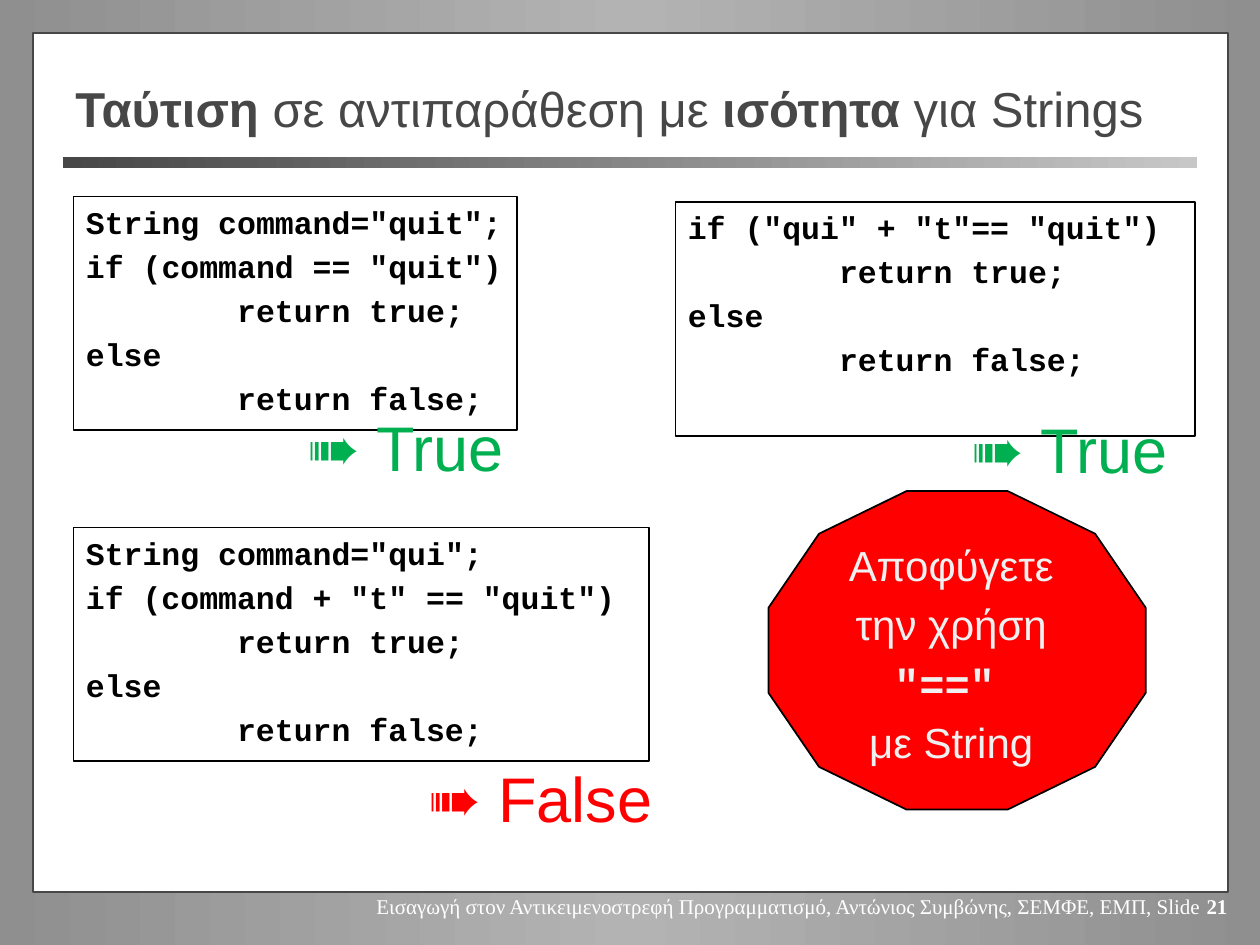
from copy import deepcopy
from lxml import etree
from pptx import Presentation
from pptx.dml.color import RGBColor
from pptx.enum import shapes, text
from pptx.oxml.ns import qn
from pptx.util import Pt

BLACK, GREY, WHITE, RED, GREEN = "000000", "474747", "FFFFFF", "FF0000", "00B050"


def rgb(value):
    return RGBColor.from_string(value)


def write(sp, lines, font, size, color, bold=False, align=text.PP_ALIGN.LEFT, before=20):
    """Fill a shape with lines; eight leading blanks become a left margin."""
    tf = sp.text_frame
    tf.word_wrap = True
    tf.vertical_anchor = text.MSO_ANCHOR.TOP
    for i, line in enumerate(lines):
        p = tf.paragraphs[0] if i == 0 else tf.add_paragraph()
        p.alignment = align
        pPr = p._p.get_or_add_pPr()
        if line.startswith("\t"):
            pPr.set("marL", str(Pt(86.4)))
            pPr.set("indent", "0")
        if before:
            spc = etree.SubElement(pPr, qn("a:spcBef"))
            etree.SubElement(spc, qn("a:spcPct")).set("val", str(before * 1000))
        # Every second part between asterisks is in the opposite weight
        for j, part in enumerate(line.strip("\t").split("*")):
            if part:
                r = p.add_run()
                r.text = part
                r.font.name, r.font.size = font, Pt(size)
                r.font.bold = bold != (j % 2 == 1)
                r.font.color.rgb = rgb(color)


prs = Presentation()
prs.slide_width, prs.slide_height = Pt(720), Pt(540)
s = prs.slides.add_slide(prs.slide_layouts[6])

# Background gradient with a lighter middle
bg = s.background.fill
bg.gradient()
bg.gradient_angle = 0
stops = bg.gradient_stops
for stop in stops:
    stop.color.rgb = rgb("8F8F8F")
first = s.background._cSld.find(".//" + qn("a:gs"))
first.addnext(deepcopy(first))
middle = bg.gradient_stops[1]
middle.position = 0.5
middle.color.rgb = rgb("B3B3B3")

# White panel
sp = s.shapes.add_shape(shapes.MSO_SHAPE.RECTANGLE, Pt(18.7), Pt(18.7), Pt(683), Pt(491))
sp.shadow.inherit = False
sp.fill.solid()
sp.fill.fore_color.rgb = rgb(WHITE)
sp.line.color.rgb = rgb(GREY)
sp.line.width = Pt(1)

# Gradient rule under the title
sp = s.shapes.add_shape(shapes.MSO_SHAPE.RECTANGLE, Pt(36), Pt(90), Pt(648), Pt(6))
sp.shadow.inherit = False
sp.line.fill.background()
sp.fill.gradient()
sp.fill.gradient_angle = 0
for stop, color in zip(sp.fill.gradient_stops, (GREY, "C7C7C7")):
    stop.color.rgb = rgb(color)

# Footer
sp = s.shapes.add_textbox(Pt(190), Pt(507), Pt(518.5), Pt(21.6))
write(sp, ["Εισαγωγή στον Αντικειμενοστρεφή Προγραμματισμό, Αντώνιος Συμβώνης, "
           "ΣΕΜΦΕ, ΕΜΠ, Slide *21*"],
      "Times New Roman", 12, WHITE, align=text.PP_ALIGN.RIGHT, before=0)

# Title
sp = s.shapes.add_textbox(Pt(36), Pt(39.6), Pt(642), Pt(44.6))
write(sp, ["*Ταύτιση* σε αντιπαράθεση με *ισότητα *για Strings"], "Arial", 28, GREY, before=0)
sp.text_frame.vertical_anchor = text.MSO_ANCHOR.MIDDLE

# Code boxes
branches = ["\treturn true;", "else", "\treturn false;"]
codes = [
    (42, 112.3, 253.4, ['String command="quit";', 'if (command == "quit")']),
    (386, 115.4, 297, ['if ("qui" + "t"== "quit")']),
    (42, 301.4, 329, ['String command="qui";', 'if (command + "t" == "quit")']),
]
for x, y, w, head in codes:
    sp = s.shapes.add_shape(shapes.MSO_SHAPE.RECTANGLE, Pt(x), Pt(y), Pt(w), Pt(133.6))
    sp.shadow.inherit = False
    sp.fill.background()
    sp.line.color.rgb = rgb(BLACK)
    sp.line.width = Pt(1)
    write(sp, head + branches, "Courier New", 18, BLACK, bold=True)

# Results of the code
results = [(168.5, 229.7, "True", GREEN), (547.9, 231, "True", GREEN), (237.6, 430.6, "False", RED)]
for x, y, value, color in results:
    sp = s.shapes.add_textbox(Pt(x), Pt(y), Pt(150), Pt(50.4))
    write(sp, ["➠ " + value], "Arial", 36, color)

# Warning sign
sp = s.shapes.add_shape(shapes.MSO_SHAPE.DODECAGON, Pt(439.2), Pt(280.6), Pt(215.5), Pt(182))
sp.shadow.inherit = False
sp.fill.solid()
sp.fill.fore_color.rgb = rgb(RED)
sp.line.color.rgb = rgb(BLACK)
sp.line.width = Pt(1)
write(sp, ["Αποφύγετε ", "την χρήση ", '*"==" *', "με String "], "Arial", 24, "F0F0F0",
      align=text.PP_ALIGN.CENTER)
sp.text_frame.word_wrap = False
sp.text_frame.paragraphs[2].runs[0].font.name = "Courier New"

prs.save("out.pptx")
